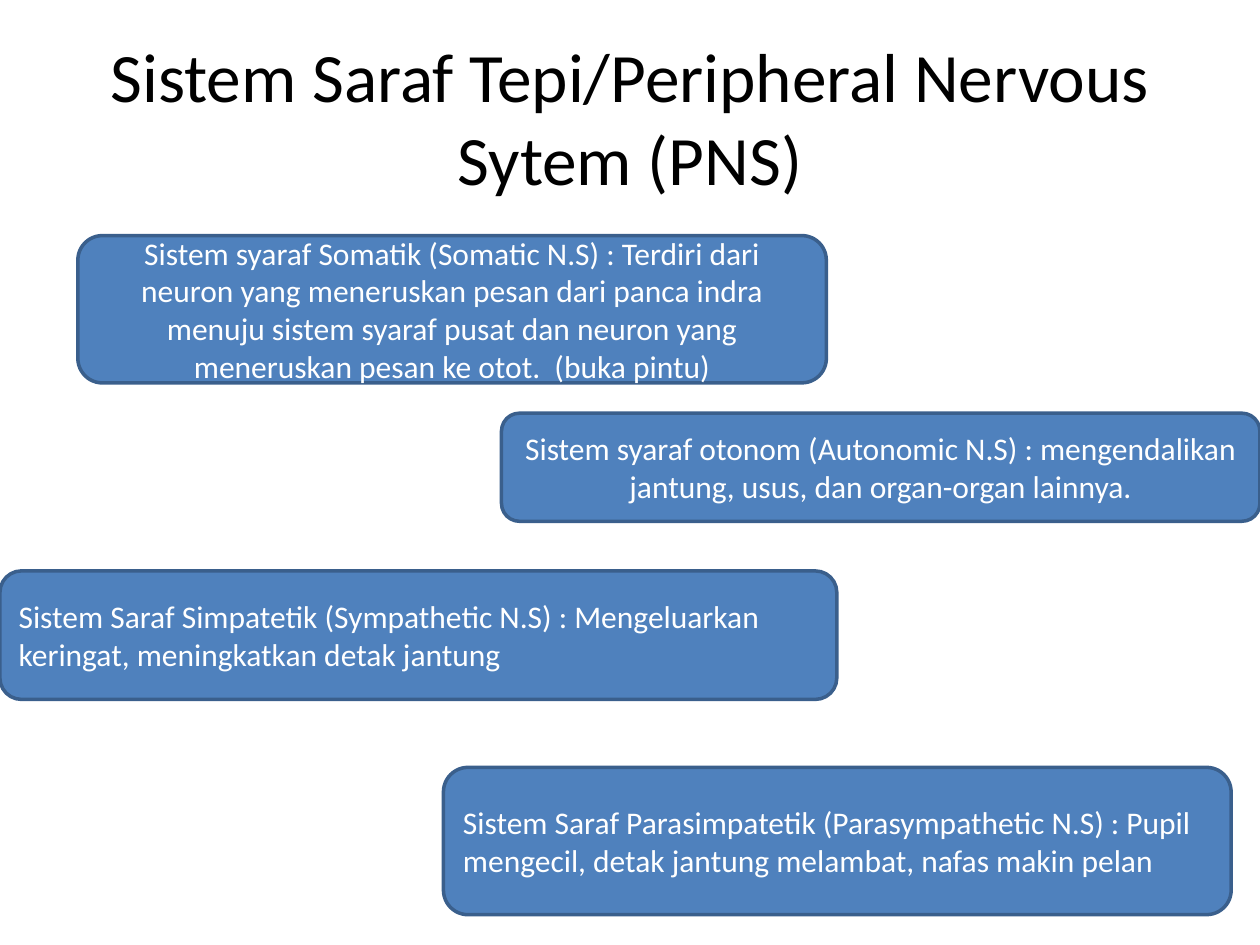
from pptx import Presentation
from pptx import util as u
from pptx.dml.color import RGBColor
from pptx.enum import shapes, text

LEFT, CENTER = text.PP_ALIGN.LEFT, text.PP_ALIGN.CENTER


def color(hex_code):
    return RGBColor.from_string(hex_code)


def write(frame, words, size=18, ink="FFFFFF", align=CENTER):
    frame.word_wrap = True
    frame.auto_size = text.MSO_AUTO_SIZE.NONE
    frame.vertical_anchor = text.MSO_ANCHOR.MIDDLE
    para = frame.paragraphs[0]
    para.alignment = align
    span = para.add_run()
    span.text = words
    span.font.name = "Calibri"
    span.font.size = u.Pt(size)
    span.font.color.rgb = color(ink)


deck = Presentation()
deck.slide_width, deck.slide_height = u.Cm(25.4), u.Cm(19.05)
page = deck.slides.add_slide(deck.slide_layouts[5])

# Title
title = page.shapes.title
title.left, title.top = u.Cm(1.27), u.Cm(0.76)
title.width, title.height = u.Cm(22.86), u.Cm(3.18)
write(title.text_frame, "Sistem Saraf Tepi/Peripheral Nervous Sytem (PNS)",
      size=39.6, ink="000000")

# Branches of the nervous system: left, top, width, height in cm
branches = [
    ((1.57, 4.75, 15.09, 2.97), CENTER,
     "Sistem syaraf Somatik (Somatic N.S) : Terdiri dari neuron yang "
     "meneruskan pesan dari panca indra menuju sistem syaraf pusat dan "
     "neuron yang meneruskan pesan ke otot.  (buka pintu)"),
    ((10.11, 8.33, 15.29, 2.18), CENTER,
     "Sistem syaraf otonom (Autonomic N.S) : mengendalikan jantung, usus, "
     "dan organ-organ lainnya."),
    ((0, 11.51, 16.87, 2.59), LEFT,
     "Sistem Saraf Simpatetik (Sympathetic N.S) : Mengeluarkan keringat, "
     "meningkatkan detak jantung"),
    ((8.94, 15.47, 15.88, 2.97), LEFT,
     "Sistem Saraf Parasimpatetik (Parasympathetic N.S) : Pupil mengecil, "
     "detak jantung melambat, nafas makin pelan"),
]
for place, align, words in branches:
    box = page.shapes.add_shape(shapes.MSO_SHAPE.ROUNDED_RECTANGLE,
                                *(u.Cm(length) for length in place))
    box.shadow.inherit = False
    box.fill.solid()
    box.fill.fore_color.rgb = color("4F81BD")
    box.line.color.rgb = color("3A5F8C")
    box.line.width = u.Pt(2)
    write(box.text_frame, words, align=align)

deck.save("out.pptx")
